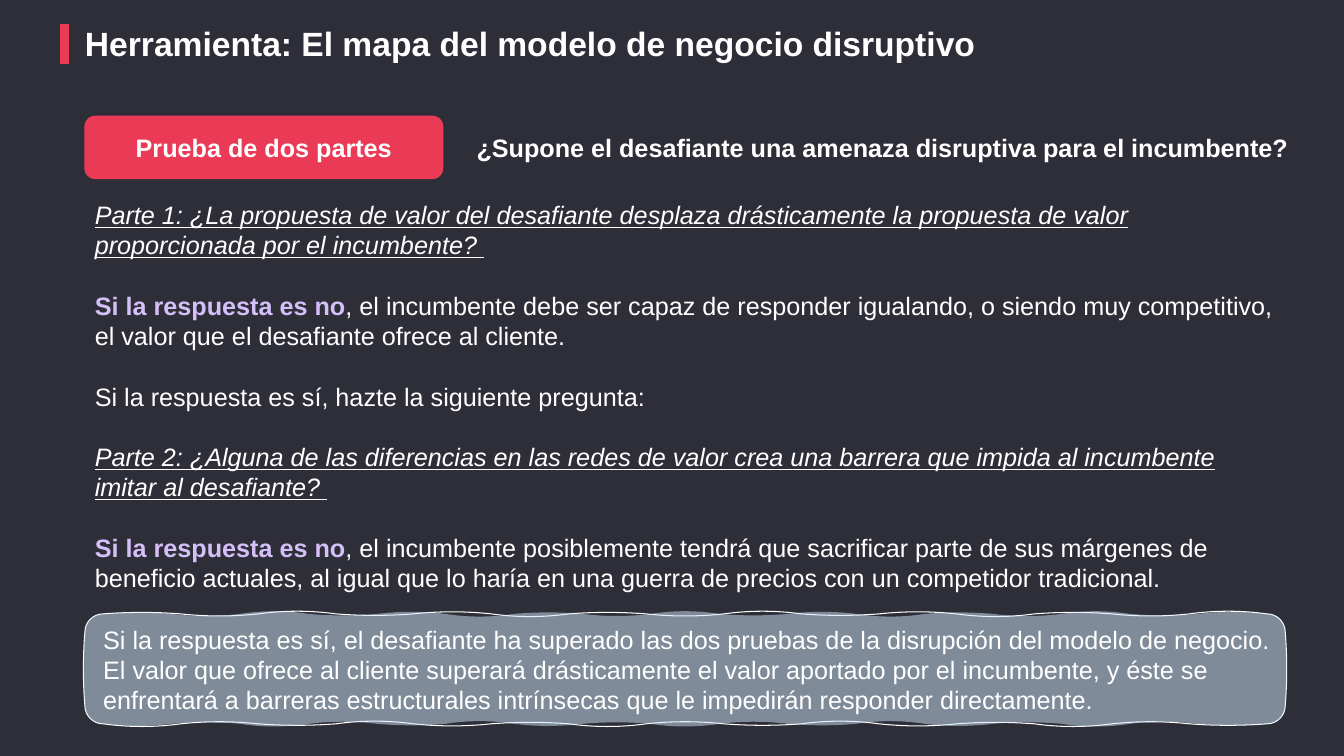
"""Builds the slide about the two-part test of the disruptive business model map."""
from dataclasses import dataclass

from lxml.etree import SubElement
from pptx import Presentation
from pptx.dml.color import RGBColor
from pptx.enum.shapes import MSO_CONNECTOR, MSO_SHAPE
from pptx.enum.text import MSO_ANCHOR, MSO_AUTO_SIZE, PP_ALIGN
from pptx.oxml.ns import qn
from pptx.util import Cm, Pt


@dataclass(frozen=True)
class Theme:
    face: str = "Arial"
    background: RGBColor = RGBColor.from_string("2E2E38")
    accent: RGBColor = RGBColor.from_string("EA3A55")
    highlight: RGBColor = RGBColor.from_string("D4BFF8")
    panel: RGBColor = RGBColor.from_string("D0E8FA")
    text: RGBColor = RGBColor.from_string("FFFFFF")
    title_size: Pt = Pt(24)
    body_size: Pt = Pt(18)
    line_height: Pt = Pt(21.6)
    outline: Pt = Pt(0.75)
    bar: Pt = Pt(6)


def wavy_curves(width, height, radius, spacing):
    sides = [
        (radius, 0, 1, 0, width - 2 * radius),
        (width, radius, 0, 1, height - 2 * radius),
        (width - radius, height, -1, 0, width - 2 * radius),
        (0, height - radius, 0, -1, height - 2 * radius),
    ]
    curves = []
    for x, y, across, down, length in sides:
        def place(along, out):
            return x + across * along + down * out, y + down * along - across * out

        count = round(length / spacing)
        step = length / count
        for index in range(count):
            swing = (-1) ** index * (0.05 + 0.02 * (index % 3))
            curves.append([place((index + 1 / 3) * step, swing),
                           place((index + 2 / 3) * step, swing),
                           place((index + 1) * step, 0)])
        curves.append([place(length + 0.55 * radius, 0),
                       place(length + radius, -0.45 * radius),
                       place(length + radius, -radius)])
    return curves


class SlideBuilder:
    def __init__(self, page, theme):
        self.page, self.theme = page, theme
        page.background.fill.solid()
        page.background.fill.fore_color.rgb = theme.background

    def style(self, paragraph, size, bold=None, italic=None, underline=None):
        font = paragraph.font
        font.name, font.size, font.color.rgb = self.theme.face, size, self.theme.text
        font.bold, font.italic, font.underline = bold, italic, underline

    def title(self, words, *place):
        box = self.page.shapes.title
        box.left, box.top, box.width, box.height = map(Cm, place)
        frame = box.text_frame
        frame.auto_size, frame.word_wrap = MSO_AUTO_SIZE.NONE, True
        frame.vertical_anchor = MSO_ANCHOR.TOP
        frame.margin_left = frame.margin_right = frame.margin_bottom = 0
        frame.margin_top = Cm(0.1)
        frame.text = words
        paragraph = frame.paragraphs[0]
        paragraph.alignment = PP_ALIGN.LEFT
        paragraph.line_spacing, paragraph.space_after = 0.85, Pt(6)
        self.style(paragraph, self.theme.title_size, bold=True)

    def accent_bar(self, x, top, bottom):
        bar = self.page.shapes.add_connector(
            MSO_CONNECTOR.STRAIGHT, Cm(x), Cm(top), Cm(x), Cm(bottom))
        bar.line.color.rgb, bar.line.width = self.theme.accent, self.theme.bar
        SubElement(bar._element.spPr, qn("a:effectLst"))

    def badge(self, words, *place):
        shape = self.page.shapes.add_shape(MSO_SHAPE.ROUNDED_RECTANGLE, *map(Cm, place))
        shape.shadow.inherit = False
        shape.fill.solid()
        shape.fill.fore_color.rgb = shape.line.color.rgb = self.theme.accent
        shape.line.width = self.theme.outline
        frame = shape.text_frame
        frame.vertical_anchor = MSO_ANCHOR.MIDDLE
        frame.text = words
        frame.paragraphs[0].alignment = PP_ALIGN.CENTER
        self.style(frame.paragraphs[0], self.theme.body_size, bold=True)

    def wavy_panel(self, left, top, width, height, radius):
        right, bottom = left + width, top + height
        builder = self.page.shapes.build_freeform(Cm(left), Cm(top))
        builder.add_line_segments([(Cm(x), Cm(y)) for x, y in (
            (right, top), (right, bottom), (left, bottom))])
        shape = builder.convert_to_shape()
        shape.shadow.inherit = False
        shape.fill.solid()
        shape.fill.fore_color.rgb = self.theme.panel
        shape.line.color.rgb, shape.line.width = self.theme.text, self.theme.outline
        properties = shape._element.spPr
        color = properties.find(qn("a:solidFill")).find(qn("a:srgbClr"))
        SubElement(color, qn("a:alpha"), val="50000")

        contours = properties.find(qn("a:custGeom")).find(qn("a:pathLst"))
        contours.remove(contours[0])
        for spacing, part in ((1.9, {"fill": "none"}), (1.7, {"stroke": "0"})):
            contour = SubElement(contours, qn("a:path"), w=str(Cm(width)), h=str(Cm(height)), **part)
            curves = wavy_curves(width, height, radius, spacing)
            for tag, points in [("a:moveTo", [(radius, 0)])] + [
                    ("a:cubicBezTo", curve) for curve in curves]:
                segment = SubElement(contour, qn(tag))
                for x, y in points:
                    SubElement(segment, qn("a:pt"), x=str(Cm(x)), y=str(Cm(y)))
            SubElement(contour, qn("a:close"))

    def text(self, place, paragraphs, bold=None):
        frame = self.page.shapes.add_textbox(*map(Cm, place)).text_frame
        frame.word_wrap = True
        for index, (lead, words, question) in enumerate(paragraphs):
            paragraph = frame.add_paragraph() if index else frame.paragraphs[0]
            paragraph.line_spacing = self.theme.line_height
            if index:
                paragraph.space_before = self.theme.line_height
            self.style(paragraph, self.theme.body_size, bold, question, question)
            if lead:
                span = paragraph.add_run()
                span.text, span.font.bold = lead, True
                span.font.color.rgb = self.theme.highlight
            paragraph.add_run().text = words


def main():
    deck = Presentation()
    deck.slide_width, deck.slide_height = Cm(33.87), Cm(19.05)
    slide = SlideBuilder(deck.slides.add_slide(deck.slide_layouts[5]), Theme())

    slide.accent_bar(1.63, 0.61, 1.61)
    slide.title("Herramienta: El mapa del modelo de negocio disruptivo", 2.14, 0.64, 26.97, 0.97)
    slide.wavy_panel(2.14, 15.47, 30.25, 2.77, 0.46)
    slide.badge("Prueba de dos partes", 2.14, 2.93, 9.02, 1.57)
    slide.text((11.76, 3.2, 21.46, 1.02), [
        ("", "¿Supone el desafiante una amenaza disruptiva para el incumbente?", None),
    ], bold=True)

    negative = "Si la respuesta es no"
    slide.text((2.14, 4.9, 30.25, 10.26), [
        ("", "Parte 1: ¿La propuesta de valor del desafiante desplaza drásticamente la propuesta "
             "de valor proporcionada por el incumbente? ", True),
        (negative, ", el incumbente debe ser capaz de responder igualando, o siendo muy "
                   "competitivo, el valor que el desafiante ofrece al cliente.", None),
        ("", "Si la respuesta es sí, hazte la siguiente pregunta:", None),
        ("", "Parte 2: ¿Alguna de las diferencias en las redes de valor crea una barrera que "
             "impida al incumbente imitar al desafiante? ", True),
        (negative, ", el incumbente posiblemente tendrá que sacrificar parte de sus márgenes de "
                   "beneficio actuales, al igual que lo haría en una guerra de precios con un "
                   "competidor tradicional.", None),
    ])
    slide.text((2.35, 15.6, 30.02, 2.57), [
        ("", "Si la respuesta es sí, el desafiante ha superado las dos pruebas de la disrupción "
             "del modelo de negocio. El valor que ofrece al cliente superará drásticamente el "
             "valor aportado por el incumbente, y éste se enfrentará a barreras estructurales "
             "intrínsecas que le impedirán responder directamente.", None),
    ])
    deck.save("out.pptx")


if __name__ == "__main__":
    main()
